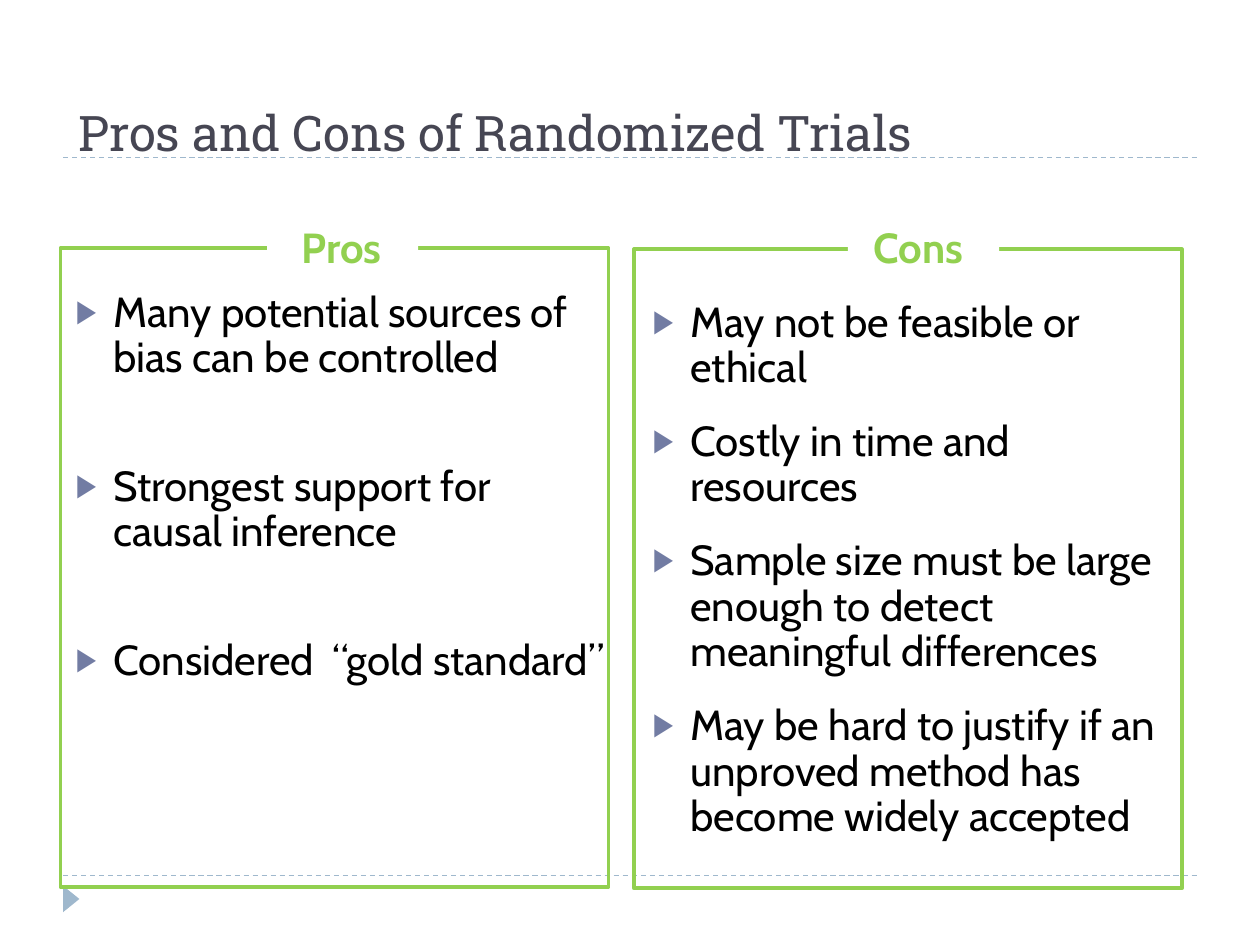
from lxml import etree
from pptx import Presentation
from pptx.dml.color import RGBColor
from pptx.enum.dml import MSO_LINE
from pptx.enum.shapes import MSO_CONNECTOR, MSO_SHAPE
from pptx.enum.text import MSO_ANCHOR, MSO_AUTO_SIZE, PP_ALIGN
from pptx.oxml.ns import qn
from pptx.util import Inches, Pt

GREEN = RGBColor(0x92, 0xD0, 0x50)
WHITE = RGBColor(0xFF, 0xFF, 0xFF)
BLACK = RGBColor(0x00, 0x00, 0x00)
SLATE = RGBColor(0x46, 0x46, 0x53)
PALE_BLUE = RGBColor(0x9F, 0xB8, 0xCD)
BULLET_BLUE = RGBColor(0x72, 0x7C, 0xA3)

DASH = MSO_LINE.DASH
STRAIGHT = MSO_CONNECTOR.STRAIGHT
RECTANGLE = MSO_SHAPE.RECTANGLE
TRIANGLE = MSO_SHAPE.ISOSCELES_TRIANGLE
LEFT, CENTER = PP_ALIGN.LEFT, PP_ALIGN.CENTER
TOP, BOTTOM = MSO_ANCHOR.TOP, MSO_ANCHOR.BOTTOM
NO_FIT = MSO_AUTO_SIZE.NONE

COLUMNS, ROWS = 100, 75
TWO_CONTENT = 3

PANELS = [
    {
        "heading": "Pros",
        "frame": (4.8, 19.7, 43.5, 50.7),
        "gap": (21.2, 17.5, 12, 5.2),
        "body": (5, 17.5, 44.2, 42.9),
        "before": 6, "after": 4.8, "extra": 36.8,
        "points": [
            "Many potential sources of bias can be controlled",
            "Strongest support for causal inference",
            "Considered  “gold standard”",
        ],
    },
    {
        "heading": "Cons",
        "frame": (50.3, 19.8, 43.5, 50.7),
        "gap": (67.3, 17.8, 12, 5.2),
        "body": (50.8, 17.5, 44.2, 52.5),
        "before": 7, "after": 9.4, "extra": 0,
        "points": [
            "May not be feasible or ethical",
            "Costly in time and resources",
            "Sample size must be large enough to detect meaningful differences",
            "May be hard to justify if an unproved method has become widely accepted",
        ],
    },
]


def apply(target, values):
    for name, value in values.items():
        setattr(target, name, value)


class SlideBuilder:
    title_font = {"name": "Roboto Slab", "size": Pt(28), "bold": False}
    heading_font = {"name": "Cabin", "size": Pt(24), "bold": True}
    point_font = {"name": "Cabin", "size": Pt(24), "bold": False}
    indent = Inches(0.3)

    def __init__(self, deck):
        self.deck = deck
        self.page = deck.slides.add_slide(deck.slide_layouts[TWO_CONTENT])

    def place(self, column, row, width, height):
        across = self.deck.slide_width / COLUMNS
        down = self.deck.slide_height / ROWS
        return (round(column * across), round(row * down),
                round(width * across), round(height * down))

    def rule(self, row):
        left, top, width, _ = self.place(5, row, 90, 0)
        line = self.page.shapes.add_connector(STRAIGHT, left, top, left + width, top)
        apply(line.line, {"width": Pt(0.75), "dash_style": DASH})
        line.line.color.rgb = PALE_BLUE
        etree.SubElement(line.element.spPr, qn("a:effectLst"))

    def shape(self, kind, area, fill=None, outline=None, rotation=0):
        box = self.page.shapes.add_shape(kind, *self.place(*area))
        box.shadow.inherit = False
        box.rotation = rotation
        if fill is None:
            box.fill.background()
        else:
            box.fill.solid()
            box.fill.fore_color.rgb = fill
        if outline is None:
            box.line.fill.background()
        else:
            box.line.color.rgb = outline
            box.line.width = Pt(2.25)

    def placeholder(self, index, area, anchor):
        box = self.page.placeholders[index]
        sides = ("left", "top", "width", "height")
        apply(box, dict(zip(sides, self.place(*area))))
        apply(box.text_frame, {"word_wrap": True, "auto_size": NO_FIT,
                               "vertical_anchor": anchor})
        box.element.getparent().append(box.element)
        return box.text_frame

    def add_text(self, para, text, font, color, layout):
        apply(para, layout)
        span = para.add_run()
        span.text = text
        apply(span.font, font)
        span.font.color.rgb = color

    def bullet(self, para, marked):
        properties = para._p.get_or_add_pPr()
        properties.set("marL", str(self.indent))
        properties.set("indent", str(-self.indent))
        if not marked:
            etree.SubElement(properties, qn("a:buNone"))
            return
        color = etree.SubElement(properties, qn("a:buClr"))
        etree.SubElement(color, qn("a:srgbClr"), val=str(BULLET_BLUE))
        etree.SubElement(properties, qn("a:buSzPct"), val="76000")
        etree.SubElement(properties, qn("a:buChar"), char="▶")

    def title(self, text, area):
        frame = self.placeholder(0, area, BOTTOM)
        self.add_text(frame.paragraphs[0], text, self.title_font, SLATE, {"alignment": LEFT})

    def panel_list(self, index, panel):
        frame = self.placeholder(index, panel["body"], TOP)
        layout = {"line_spacing": 0.9, "space_before": Pt(panel["before"]),
                  "space_after": Pt(panel["after"])}
        heading = frame.paragraphs[0]
        self.add_text(heading, panel["heading"], self.heading_font, GREEN,
                      {**layout, "alignment": CENTER})
        self.bullet(heading, False)
        for number, point in enumerate(panel["points"]):
            para = frame.add_paragraph()
            self.add_text(para, point, self.point_font, BLACK, {**layout, "alignment": LEFT})
            if number:
                para.space_before = Pt(panel["before"] + panel["extra"])
            self.bullet(para, True)


def main():
    deck = Presentation()
    deck.slide_width, deck.slide_height = Inches(10), Inches(7.5)
    builder = SlideBuilder(deck)
    for row in (69.5, 12.5):
        builder.rule(row)
    builder.shape(TRIANGLE, (4.6, 70.7, 2.1, 1.3), fill=PALE_BLUE, rotation=90)
    for panel in reversed(PANELS):
        builder.shape(RECTANGLE, panel["frame"], outline=GREEN)
        builder.shape(RECTANGLE, panel["gap"], fill=WHITE)
    builder.title("Pros and Cons of Randomized Trials", (5.2, 2.5, 89.2, 10.8))
    for index, panel in enumerate(PANELS, start=1):
        builder.panel_list(index, panel)
    deck.save("out.pptx")


if __name__ == "__main__":
    main()
